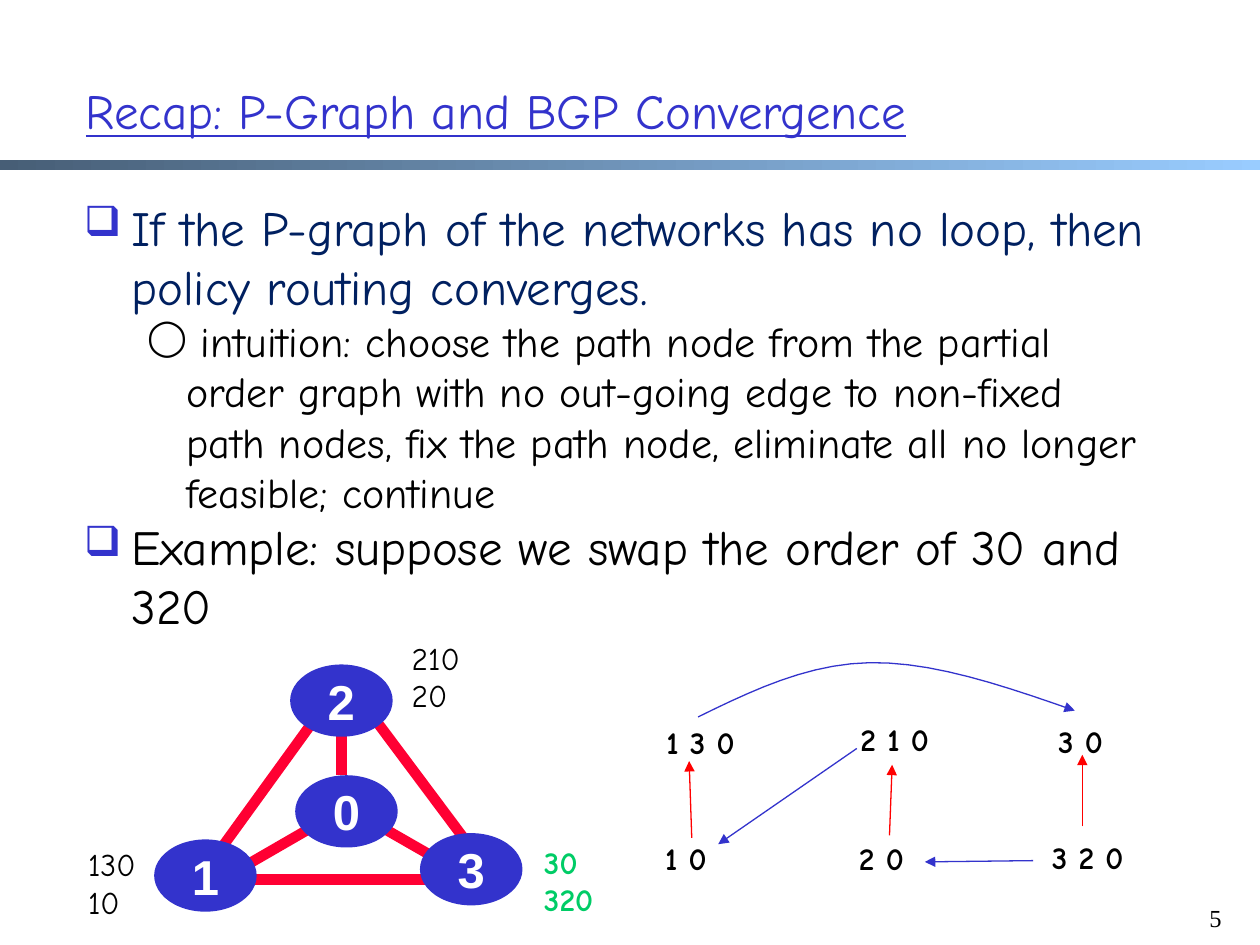
from lxml import etree
from pptx import Presentation
from pptx.dml.color import RGBColor
from pptx.enum.shapes import MSO_CONNECTOR, MSO_SHAPE
from pptx.enum.text import MSO_ANCHOR, MSO_AUTO_SIZE, PP_ALIGN
from pptx.oxml.ns import qn
from pptx.util import Pt

STRAIGHT = MSO_CONNECTOR.STRAIGHT
RECT, OVAL = MSO_SHAPE.RECTANGLE, MSO_SHAPE.OVAL
MIDDLE, TOP = MSO_ANCHOR.MIDDLE, MSO_ANCHOR.TOP
LEFT, CENTER = PP_ALIGN.LEFT, PP_ALIGN.CENTER

BLUE = "3333CC"
THEME = {
    "title": {"size": 28, "name": "Comic Neue", "color": BLUE, "underline": True},
    "lead": {"size": 28, "name": "Comic Neue", "color": "002060"},
    "point": {"size": 28, "name": "Comic Neue", "color": "000000"},
    "detail": {"size": 24, "name": "Comic Neue", "color": "000000"},
    "path": {"size": 18, "name": "Comic Neue", "color": "000000", "bold": True},
    "routes": {"size": 18, "name": "Comic Neue", "color": "000000"},
    "swapped": {"size": 18, "name": "Comic Neue", "color": "00CC66", "bold": True},
    "node": {"size": 28, "name": "Arial", "color": "FFFFFF", "bold": True},
    "number": {"size": 14, "name": "Times New Roman", "color": "000000"},
    "bar": ("475E76", "99CCFF"),
    "edge": ("FF0033", 6),
    "prefer": ("FF0000", 0.75),
    "depend": (BLUE, 0.75),
}

TITLE = "Recap: P-Graph and BGP Convergence"
# text, style, level
BODY = [
    ("If the P-graph of the networks has no loop, then policy routing converges.",
     "lead", 0),
    (" intuition: choose the path node from the partial order graph with no "
     "out-going edge to non-fixed path nodes, fix the path node, eliminate all "
     "no longer feasible; continue", "detail", 1),
    ("Example: suppose we swap the order of 30 and 320", "point", 0),
]
# left margin, hanging indent, bullet, bullet colour
LEVELS = [(27, 27, "❑", BLUE), (58.5, 22.5, "◯", None)]

# label, left, top
PATHS = [("1 3 0", 373.7, 409.7), ("2 1 0", 484.6, 408.2), ("3 0", 597.6, 409),
         ("1 0", 373, 475.9), ("2 0", 483.8, 475.9), ("3 2 0", 594, 475.2)]
PATH_SIZE = (86.4, 28.8)
# style, start x, start y, end x, end y
PATH_ARROWS = [
    ("depend", 489.6, 427.7, 410.4, 482.4), ("depend", 590.4, 491.8, 528.5, 492.5),
    ("prefer", 395.3, 478.8, 393.8, 434.9), ("prefer", 508.3, 477.4, 509.8, 437),
    ("prefer", 618.5, 472.3, 618.5, 431.3),
]
# two Bezier pieces from path 130 to path 30
ARC = [((398.9, 409.7), (429.8, 394.6), (461.5, 379.4), (496.8, 378.7)),
       ((496.8, 378.7), (532.8, 378), (573.1, 391.7), (614.2, 406.1))]
ARC_STEPS = 10

NODES = [("2", 166.3, 380.2), ("0", 169.2, 443.5),
         ("3", 240.5, 476.6), ("1", 88.6, 480.2)]
NODE_SIZE = (57.6, 40.3)
EDGES = [(279.4, 498.2, 205.2, 398.9), (188.6, 398.9, 110.9, 506.2),
         (195.1, 387.4, 195.1, 442.8), (191.5, 465.1, 140.4, 494.6),
         (256.3, 494.6, 217.4, 472.3), (285.8, 502.6, 110.9, 502.6)]
# routes in order of preference, style, left, top, width
ROUTES = [(("30", "320"), "swapped", 303.8, 478, 47.5),
          (("210", "20"), "routes", 228.2, 361.4, 44.6),
          (("130", "10"), "routes", 43.2, 479.5, 44.6)]


def rgb(value):
    return RGBColor.from_string(value)


def write(tf, lines, style, anchor=TOP, align=LEFT, wrap=True):
    tf.word_wrap, tf.vertical_anchor = wrap, anchor
    tf.auto_size = MSO_AUTO_SIZE.NONE
    for i, line in enumerate(lines):
        p = tf.paragraphs[0] if i == 0 else tf.add_paragraph()
        fill_paragraph(p, line, style, align)


def fill_paragraph(p, text, style, align=LEFT):
    p.alignment = align
    r = p.add_run()
    r.text = text
    for key, value in THEME[style].items():
        if key == "color":
            r.font.color.rgb = rgb(value)
        else:
            setattr(r.font, key, Pt(value) if key == "size" else value)


def add_text(shapes, box, lines, style, **options):
    sp = shapes.add_textbox(*map(Pt, box))
    write(sp.text_frame, lines, style, **options)


def add_bullet(p, level):
    margin, hang, char, color = LEVELS[level]
    pPr = p._p.get_or_add_pPr()
    pPr.set("marL", str(Pt(margin)))
    pPr.set("indent", str(-Pt(hang)))
    if color:
        bu = etree.SubElement(pPr, qn("a:buClr"))
        etree.SubElement(bu, qn("a:srgbClr"), val=color)
    etree.SubElement(pPr, qn("a:buSzPct"), val="85000")
    etree.SubElement(pPr, qn("a:buChar"), char=char)


def style_line(sp, style, arrow):
    color, width = THEME[style]
    sp.line.color.rgb = rgb(color)
    sp.line.width = Pt(width)
    if arrow:
        etree.SubElement(sp.line._get_or_add_ln(), qn("a:tailEnd"), type="triangle")


def add_line(shapes, ends, style, arrow=False):
    sp = shapes.add_connector(STRAIGHT, *map(Pt, ends))
    style_line(sp, style, arrow)
    etree.SubElement(sp._element.spPr, qn("a:effectLst"))


def bezier(piece, t):
    weights = ((1 - t) ** 3, 3 * t * (1 - t) ** 2, 3 * t * t * (1 - t), t ** 3)
    return tuple(Pt(sum(w * pt[axis] for w, pt in zip(weights, piece)))
                 for axis in (0, 1))


def add_arc(shapes):
    points = [bezier(piece, i / ARC_STEPS)
              for piece in ARC for i in range(1, ARC_STEPS + 1)]
    builder = shapes.build_freeform(*bezier(ARC[0], 0))
    builder.add_line_segments(points, close=False)
    sp = builder.convert_to_shape()
    sp.shadow.inherit = False
    sp.fill.background()
    style_line(sp, "depend", True)


def add_header(s):
    bar = s.shapes.add_shape(RECT, 0, Pt(91.4), Pt(720), Pt(5.8))
    bar.shadow.inherit = False
    bar.line.fill.background()
    bar.fill.gradient()
    bar.fill.gradient_angle = 0
    for stop, color in zip(bar.fill.gradient_stops, THEME["bar"]):
        stop.color.rgb = rgb(color)
    title = s.shapes.title
    title.left, title.top, title.width, title.height = map(Pt, (41.8, 18, 632.2, 90))
    write(title.text_frame, [TITLE], "title", anchor=MIDDLE)


def add_body(s):
    tf = s.shapes.add_textbox(*map(Pt, (41, 109.4, 620, 382.3))).text_frame
    tf.word_wrap = True
    for i, (text, style, level) in enumerate(BODY):
        p = tf.paragraphs[0] if i == 0 else tf.add_paragraph()
        p.level = level
        fill_paragraph(p, text, style)
        add_bullet(p, level)


def add_p_graph(shapes):
    for label, x, y in PATHS:
        add_text(shapes, (x, y, *PATH_SIZE), [label], "path")
    for style, *ends in PATH_ARROWS:
        add_line(shapes, ends, style, arrow=True)
    add_arc(shapes)


def add_network(shapes):
    for ends in EDGES:
        add_line(shapes, ends, "edge")
    for label, x, y in NODES:
        sp = shapes.add_shape(OVAL, *map(Pt, (x, y, *NODE_SIZE)))
        sp.shadow.inherit = False
        sp.fill.solid()
        sp.fill.fore_color.rgb = sp.line.color.rgb = rgb(BLUE)
        sp.line.width = Pt(1)
        write(sp.text_frame, [label], "node", anchor=MIDDLE, align=CENTER, wrap=False)
    for routes, style, x, y, width in ROUTES:
        add_text(shapes, (x, y, width, 50.4), routes, style, wrap=False)


def main():
    prs = Presentation()
    prs.slide_width, prs.slide_height = Pt(720), Pt(540)
    s = prs.slides.add_slide(prs.slide_layouts[5])
    add_header(s)
    add_body(s)
    add_p_graph(s.shapes.add_group_shape().shapes)
    add_network(s.shapes.add_group_shape().shapes)
    add_text(s.shapes, (684, 512.6, 36, 27), ["5"], "number")
    prs.save("out.pptx")


if __name__ == "__main__":
    main()
